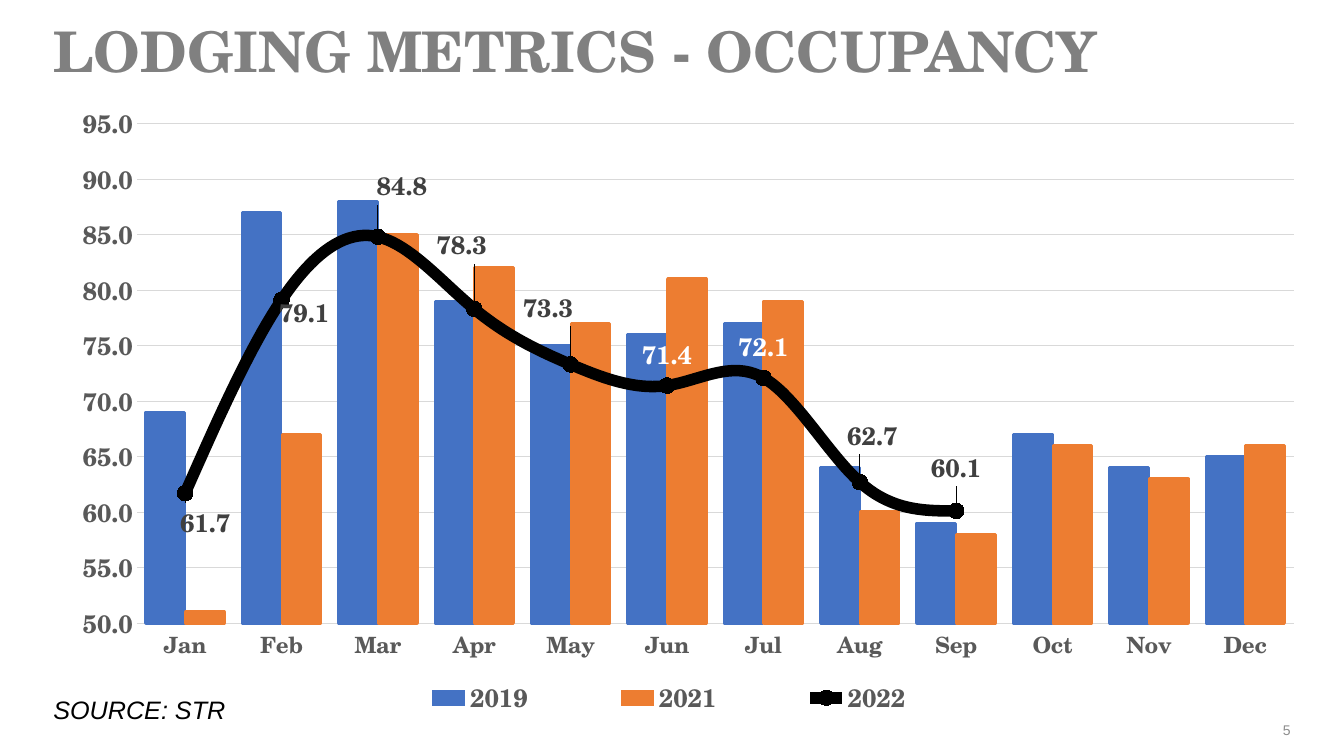
from pptx import Presentation
from pptx.chart.data import CategoryChartData
from pptx.dml.color import RGBColor
from pptx.enum.chart import XL_CHART_TYPE as CT, XL_LABEL_POSITION as LP
from pptx.enum.chart import XL_LEGEND_POSITION as LG, XL_MARKER_STYLE as MS, XL_TICK_MARK as TM
from pptx.enum.text import MSO_ANCHOR as MA, PP_ALIGN as PA
from pptx.oxml import parse_xml
from pptx.oxml.ns import nsdecls, qn
from pptx.util import Inches, Pt

SERIF, SANS = "TeX Gyre Schola", "Arial"
GRAY, GRID, BLACK = "595959", "D9D9D9", "000000"


def style(font, color, **values):
    font.color.rgb = RGBColor.from_string(color)
    for name, value in values.items():
        setattr(font, name, value)


def place(parent, index, **values):
    for old in parent.findall(qn("c:layout")):
        parent.remove(old)
    items = "".join(f'<c:{k} val="{v}"/>' for k, v in values.items())
    parent.insert(index, parse_xml(
        f'<c:layout {nsdecls("c")}><c:manualLayout>{items}</c:manualLayout></c:layout>'))


prs = Presentation()
prs.slide_width, prs.slide_height = Inches(13.33), Inches(7.5)
s = prs.slides.add_slide(prs.slide_layouts[6])

months = "Jan Feb Mar Apr May Jun Jul Aug Sep Oct Nov Dec".split()
bars = {
    "2019": ("4472C4", [69, 87, 88, 79, 75, 76, 77, 64, 59, 67, 64, 65]),
    "2021": ("ED7D31", [51, 67, 85, 82, 77, 81, 79, 60, 58, 66, 63, 66]),
}
occupancy = [61.7, 79.1, 84.8, 78.3, 73.3, 71.4, 72.1, 62.7, 60.1]

cd = CategoryChartData(number_format="0.0")
cd.categories = months
for year, (color, values) in bars.items():
    cd.add_series(year, values)
cd.add_series("2022", occupancy + [None] * (len(months) - len(occupancy)))
chart = s.shapes.add_chart(CT.COLUMN_CLUSTERED, Inches(0.57), Inches(0.91),
                           Inches(12.51), Inches(6.33), cd).chart
chart.has_title = False
style(chart.font, BLACK, size=Pt(10), name=SANS)

columns = chart.plots[0]
columns.gap_width, columns.overlap, columns.vary_by_categories = 47, -3, False
for ser, (color, values) in zip(columns.series, bars.values()):
    ser.format.fill.solid()
    ser.format.fill.fore_color.rgb = RGBColor.from_string(color)
    ser.format.line.color.rgb = RGBColor.from_string(color)
    ser.format.line.width = Pt(2.25)

bar_xml = columns._element
ser_xml = bar_xml.findall(qn("c:ser"))[-1]
for node in ser_xml.findall(qn("c:invertIfNegative")):
    ser_xml.remove(node)
axes = "".join(f'<c:axId val="{a.get("val")}"/>' for a in bar_xml.findall(qn("c:axId")))
line_xml = parse_xml(
    f'<c:lineChart {nsdecls("c")}><c:grouping val="standard"/><c:varyColors val="0"/>'
    f'<c:marker val="1"/>{axes}</c:lineChart>')
line_xml.insert(2, ser_xml)
bar_xml.addnext(line_xml)

line = chart.plots[1].series[0]
line.smooth = True
line.format.line.color.rgb = RGBColor.from_string(BLACK)
line.format.line.width = Pt(8.25)
line.marker.style, line.marker.size = MS.CIRCLE, 11
line.marker.format.fill.solid()
line.marker.format.fill.fore_color.rgb = RGBColor.from_string("FFFF00")
line.marker.format.line.color.rgb = RGBColor.from_string(BLACK)
line.marker.format.line.width = Pt(8.25)

labels = line.data_labels
labels.show_value, labels.position = True, LP.ABOVE
labels.number_format, labels.number_format_is_linked = "0.0", False
style(labels.font, "404040", size=Pt(18), bold=True, name=SERIF)
shifts = [(0.016, 0.094), (0.018, 0.069), (0.019, -0.031), (-0.01, -0.052),
          (-0.018, -0.041), None, None, (0.01, -0.025), (0, -0.02)]
for i, shift in enumerate(shifts):
    label = line.points[i].data_label
    style(label.font, "404040" if shift else "FFFFFF", size=Pt(18), bold=True, name=SERIF)
    label.position = LP.ABOVE
    if shift:
        place(ser_xml.findall(".//" + qn("c:dLbl"))[i], 1, x=shift[0], y=shift[1])

cat, val = chart.category_axis, chart.value_axis
for axis, size in (cat, 16), (val, 18):
    axis.major_tick_mark = axis.minor_tick_mark = TM.NONE
    style(axis.tick_labels.font, GRAY, size=Pt(size), bold=True, name=SERIF)
val.minimum_scale, val.maximum_scale, val.major_unit = 50, 95, 5
val.tick_labels.number_format, val.tick_labels.number_format_is_linked = "0.0", False
val.format.line.fill.background()
for rule in cat.format.line, val.major_gridlines.format.line:
    rule.color.rgb = RGBColor.from_string(GRID)
    rule.width = Pt(0.75)

chart.has_legend = True
legend = chart.legend
legend.position, legend.include_in_layout = LG.BOTTOM, False
style(legend.font, GRAY, size=Pt(18), bold=True, name=SERIF)
place(legend._element, 1, xMode="edge", yMode="edge", x=0.23, y=0.91, w=0.51, h=0.08)
place(bar_xml.getparent(), 0, layoutTarget="inner", xMode="edge", yMode="edge",
      x=0.063, y=0.05, w=0.917, h=0.783)

texts = [
    ("LODGING METRICS - OCCUPANCY", (0.43, 0.16, 10.62, 0.75), MA.MIDDLE, PA.LEFT, 0.9,
     "808080", dict(size=Pt(40), bold=True, name=SERIF)),
    ("5", (9.9, 7.04, 3, 0.4), MA.MIDDLE, PA.RIGHT, 1, "8C8C8C", dict(size=Pt(10), name=SANS)),
    ("SOURCE: STR", (0.43, 6.84, 2.38, 0.4), MA.TOP, PA.LEFT, 1,
     BLACK, dict(size=Pt(18), italic=True, name=SANS)),
]
for text, box, anchor, align, spacing, color, font in texts:
    tf = s.shapes.add_textbox(*map(Inches, box)).text_frame
    tf.word_wrap, tf.vertical_anchor = True, anchor
    p = tf.paragraphs[0]
    p.alignment, p.line_spacing = align, spacing
    r = p.add_run()
    r.text = text
    style(r.font, color, **font)

prs.save("out.pptx")
